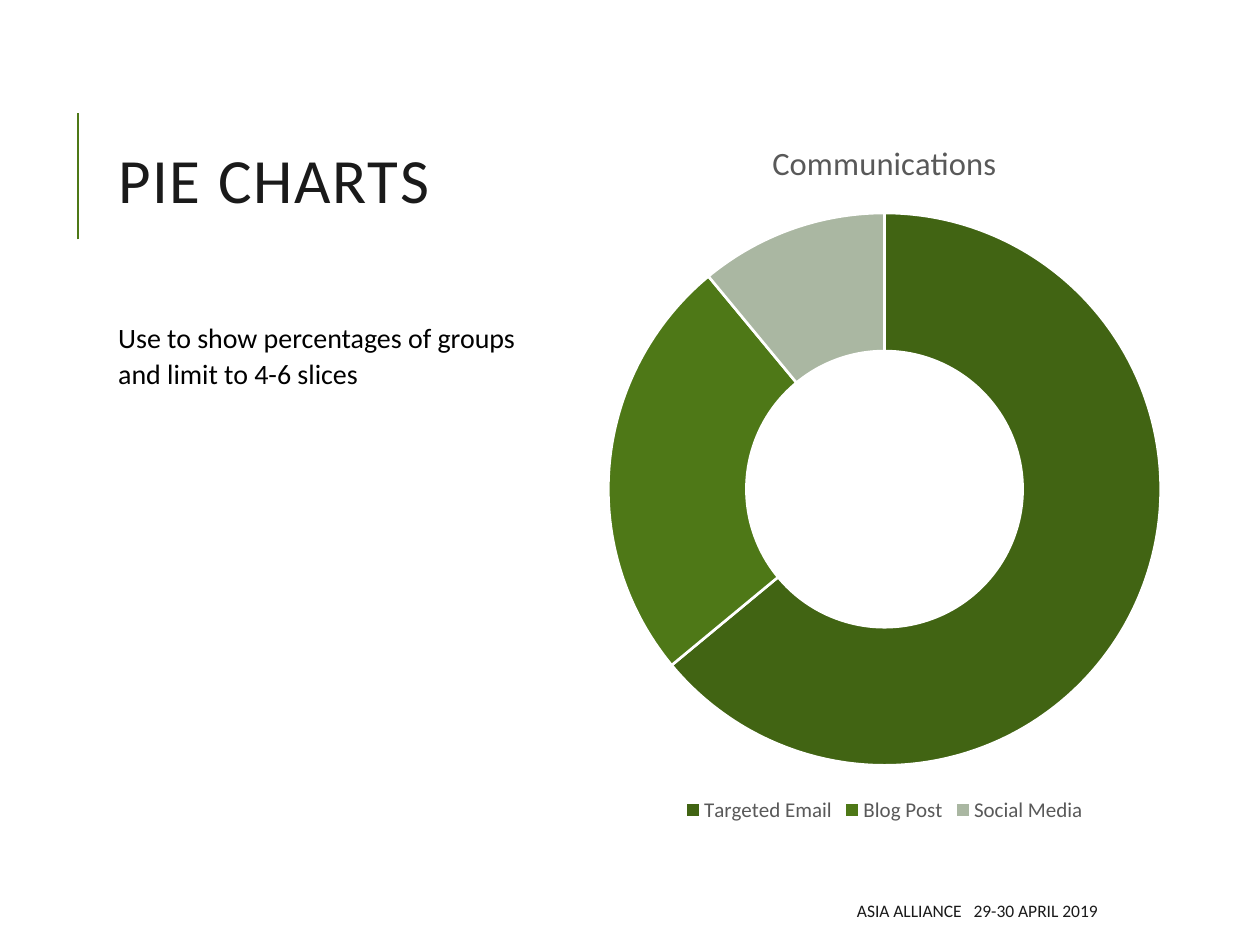
import dataclasses

import lxml.etree
import pptx
import pptx.chart.data
import pptx.dml.color
import pptx.enum.chart
import pptx.enum.shapes
import pptx.enum.text
import pptx.oxml.ns
import pptx.util
from pptx.util import Inches


@dataclasses.dataclass(frozen=True)
class Theme:
    font: str = "Calibri"
    ink: str = "1A1A1A"
    black: str = "000000"
    grey: str = "595959"
    white: str = "FFFFFF"
    accent: str = "4E7817"
    slices: tuple = ("416413", "4E7817", "AAB7A2")
    title_size: float = 36
    body_size: float = 16
    footer_size: float = 10
    chart_title_size: float = 18.6
    legend_size: float = 12


THEME = Theme()
ALIGN = pptx.enum.text.PP_ALIGN
ANCHOR = pptx.enum.text.MSO_ANCHOR


def rgb(color):
    return pptx.dml.color.RGBColor.from_string(color)


def style_font(font, size, color):
    font.name = THEME.font
    font.size = pptx.util.Pt(size)
    font.bold = False
    font.color.rgb = rgb(color)


def add_text(page, box, runs, size, color, anchor=ANCHOR.TOP, align=ALIGN.LEFT):
    """Place one paragraph; each run is (text, letter spacing in points)."""
    frame = page.shapes.add_textbox(*map(Inches, box)).text_frame
    frame.word_wrap = True
    frame.vertical_anchor = anchor
    para = frame.paragraphs[0]
    para.alignment = align
    for text, spacing in runs:
        span = para.add_run()
        span.text = text
        style_font(span.font, size, color)
        if spacing:
            span.font._element.set("spc", str(round(spacing * 100)))
    return para


def add_accent_line(page, box):
    left, top, _, height = box
    line = page.shapes.add_connector(
        pptx.enum.shapes.MSO_CONNECTOR.STRAIGHT,
        Inches(left), Inches(top + height), Inches(left), Inches(top))
    line.line.color.rgb = rgb(THEME.accent)
    line.line.width = pptx.util.Pt(1.5)
    lxml.etree.SubElement(line._element.spPr, pptx.oxml.ns.qn("a:effectLst"))


def add_title(page, box):
    para = add_text(page, box, [("PIE CHARTS", 1)], THEME.title_size,
                    THEME.ink, ANCHOR.MIDDLE)
    para.line_spacing = 0.8


def add_body(page, box):
    para = add_text(
        page, box,
        [("Use to show percentages of groups and limit to 4-6 slices", 0)],
        THEME.body_size, THEME.black)
    para.line_spacing = 1.08
    para.space_before = pptx.util.Pt(6)
    para.space_after = pptx.util.Pt(2)


def add_footer(page, box):
    # The widened space separates the event from its date
    add_text(page, box,
             [("ASIA ALLIANCE", 0), (" ", 4.5), ("29-30 APRIL 2019", 0)],
             THEME.footer_size, THEME.ink, ANCHOR.MIDDLE, ALIGN.RIGHT)


def add_doughnut(page, box):
    data = pptx.chart.data.CategoryChartData()
    data.categories = ["Targeted Email", "Blog Post", "Social Media"]
    data.add_series("Communications", (64, 25, 11))
    chart = page.shapes.add_chart(
        pptx.enum.chart.XL_CHART_TYPE.DOUGHNUT, *map(Inches, box), data).chart
    style_font(chart.font, THEME.footer_size, THEME.black)

    # Chart title and legend
    chart.has_title = True
    span = chart.chart_title.text_frame.paragraphs[0].add_run()
    span.text = "Communications"
    style_font(span.font, THEME.chart_title_size, THEME.grey)
    chart.chart_title.include_in_layout = False
    chart.has_legend = True
    chart.legend.position = pptx.enum.chart.XL_LEGEND_POSITION.BOTTOM
    chart.legend.include_in_layout = False
    style_font(chart.legend.font, THEME.legend_size, THEME.grey)

    # Slices and hole
    plot = chart.plots[0]
    plot.vary_by_categories = True
    for index, color in enumerate(THEME.slices):
        piece = plot.series[0].points[index].format
        piece.fill.solid()
        piece.fill.fore_color.rgb = rgb(color)
        piece.line.color.rgb = rgb(THEME.white)
        piece.line.width = pptx.util.Pt(1.5)
    plot._element.find(pptx.oxml.ns.qn("c:holeSize")).set("val", "75")


def main():
    deck = pptx.Presentation()
    deck.slide_width, deck.slide_height = Inches(10), Inches(7.5)
    page = deck.slides.add_slide(deck.slide_layouts[6])
    page.background.fill.solid()
    page.background.fill.fore_color.rgb = rgb(THEME.white)

    add_accent_line(page, (0.62, 0.9, 0, 1))
    add_title(page, (0.84, 0.52, 3.6, 1.9))
    add_doughnut(page, (4.69, 0.9, 4.66, 5.67))
    add_body(page, (0.84, 2.47, 3.6, 4.11))
    add_footer(page, (3.97, 7.08, 4.84, 0.3))
    deck.save("out.pptx")


if __name__ == "__main__":
    main()
